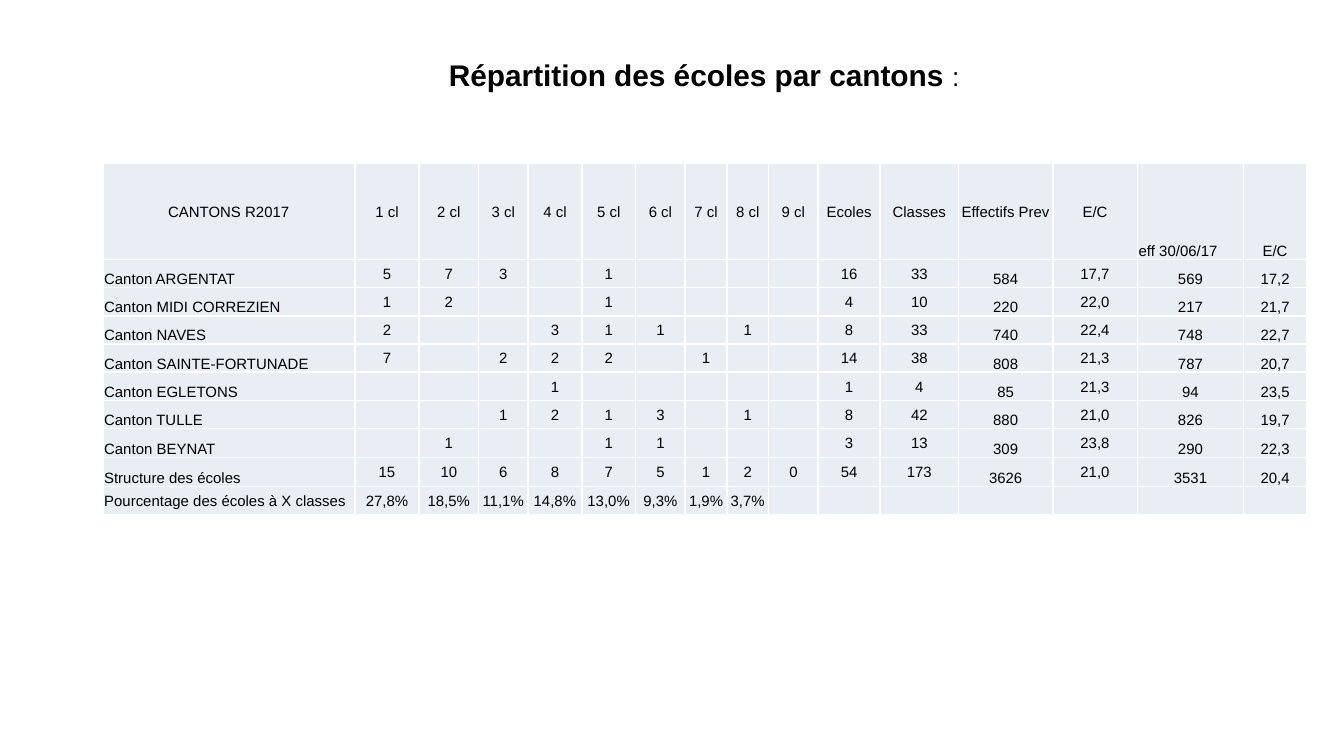
"""Build the slide that spreads the schools over the cantons."""
from dataclasses import dataclass

from lxml.etree import SubElement as Sub
from pptx import Presentation as Deck
from pptx.dml.color import RGBColor as Rgb
from pptx.enum.text import MSO_ANCHOR as Anchor, MSO_AUTO_SIZE as Auto, PP_ALIGN as Align
from pptx.oxml.ns import qn
from pptx.util import Pt

PX = 4572


@dataclass(frozen=True)
class Theme:
    font: str = "Arial"
    ink: str = "000000"
    fill: str = "E9EDF4"
    rule: str = "FFFFFF"
    head: int = 16
    mark: int = 14
    body: int = 8


LOOK = Theme()
COLS = [375, 96, 88, 74, 80, 80, 74, 62, 62, 74, 92, 117, 140, 126, 158, 94]
TALL = [143] + [42] * 6 + [43] * 3
LOW = {0, 12, 14, 15}
ROWS = [line.split("|") for line in (
    "CANTONS R2017|1 cl|2 cl|3 cl|4 cl|5 cl|6 cl|7 cl|8 cl|9 cl"
    "|Ecoles|Classes|Effectifs Prev|E/C|eff 30/06/17|E/C",
    "Canton ARGENTAT|5|7|3||1|||||16|33|584|17,7|569|17,2",
    "Canton MIDI CORREZIEN|1|2|||1|||||4|10|220|22,0|217|21,7",
    "Canton NAVES|2|||3|1|1||1||8|33|740|22,4|748|22,7",
    "Canton SAINTE-FORTUNADE|7||2|2|2||1|||14|38|808|21,3|787|20,7",
    "Canton EGLETONS||||1||||||1|4|85|21,3|94|23,5",
    "Canton TULLE|||1|2|1|3||1||8|42|880|21,0|826|19,7",
    "Canton BEYNAT||1|||1|1||||3|13|309|23,8|290|22,3",
    "Structure des écoles|15|10|6|8|7|5|1|2|0|54|173|3626|21,0|3531|20,4",
    "Pourcentage des écoles à X classes|27,8%|18,5%|11,1%|14,8%|13,0%"
    "|9,3%|1,9%|3,7%|||||||",
)]


def box(*sides):
    """Turn px lengths into EMU."""
    return [side * PX for side in sides]


def add_run(para, text, size, bold=False):
    """Add one styled run to a paragraph."""
    run = para.add_run()
    run.text = text
    font = run.font
    font.name, font.size, font.bold = LOOK.font, Pt(size), bold
    font.color.rgb = Rgb.from_string(LOOK.ink)


def add_title(slide):
    """Place and fill the title."""
    shape = slide.shapes.title
    shape.left, shape.top, shape.width, shape.height = box(150, 74, 1796, 94)
    frame = shape.text_frame
    frame.auto_size, frame.word_wrap = Auto.NONE, True
    frame.vertical_anchor = Anchor.TOP
    para = frame.paragraphs[0]
    para.alignment, para.space_before = Align.CENTER, Pt(3.2)
    add_run(para, "Répartition des écoles par cantons ", LOOK.head, True)
    add_run(para, ":", LOOK.mark)


def add_rules(cell):
    """Draw the four borders of a cell."""
    props = cell._tc.get_or_add_tcPr()
    for side in ("a:lnL", "a:lnR", "a:lnT", "a:lnB"):
        line = Sub(props, qn(side), w=str(Pt(1)))
        Sub(Sub(line, qn("a:solidFill")), qn("a:srgbClr"), val=LOOK.rule)


def place(row, col):
    """Return the anchor and alignment of a cell."""
    if row == 0:
        low, left = col > 13, col == 14
    else:
        low, left = col in LOW and row < len(ROWS) - 1, col == 0
    return (Anchor.BOTTOM if low else Anchor.MIDDLE,
            Align.LEFT if left else Align.CENTER)


def fill_cell(cell, text, anchor, align):
    """Style one cell and write its text."""
    add_rules(cell)
    cell.fill.solid()
    cell.fill.fore_color.rgb = Rgb.from_string(LOOK.fill)
    cell.margin_left, cell.margin_top, cell.margin_right, cell.margin_bottom = box(2, 2, 2, 0)
    cell.vertical_anchor = anchor
    para = cell.text_frame.paragraphs[0]
    para.alignment = align
    if text:
        add_run(para, text, LOOK.body)
    else:
        Sub(para._p, qn("a:endParaRPr"), sz=str(LOOK.body * 100))


def add_grid(slide):
    """Add the table of cantons."""
    area = box(153, 243, sum(COLS), sum(TALL))
    grid = slide.shapes.add_table(len(TALL), len(COLS), *area).table
    grid.first_row = grid.horz_banding = False
    for col, wide in zip(grid.columns, COLS):
        col.width = wide * PX
    for row, tall in zip(grid.rows, TALL):
        row.height = tall * PX
    for r, texts in enumerate(ROWS):
        for c, text in enumerate(texts):
            fill_cell(grid.cell(r, c), text, *place(r, c))


def main():
    """Build and save the deck."""
    deck = Deck()
    deck.slide_width, deck.slide_height = box(2000, 1125)
    slide = deck.slides.add_slide(deck.slide_layouts[5])
    add_grid(slide)
    add_title(slide)
    deck.save("out.pptx")


if __name__ == "__main__":
    main()
